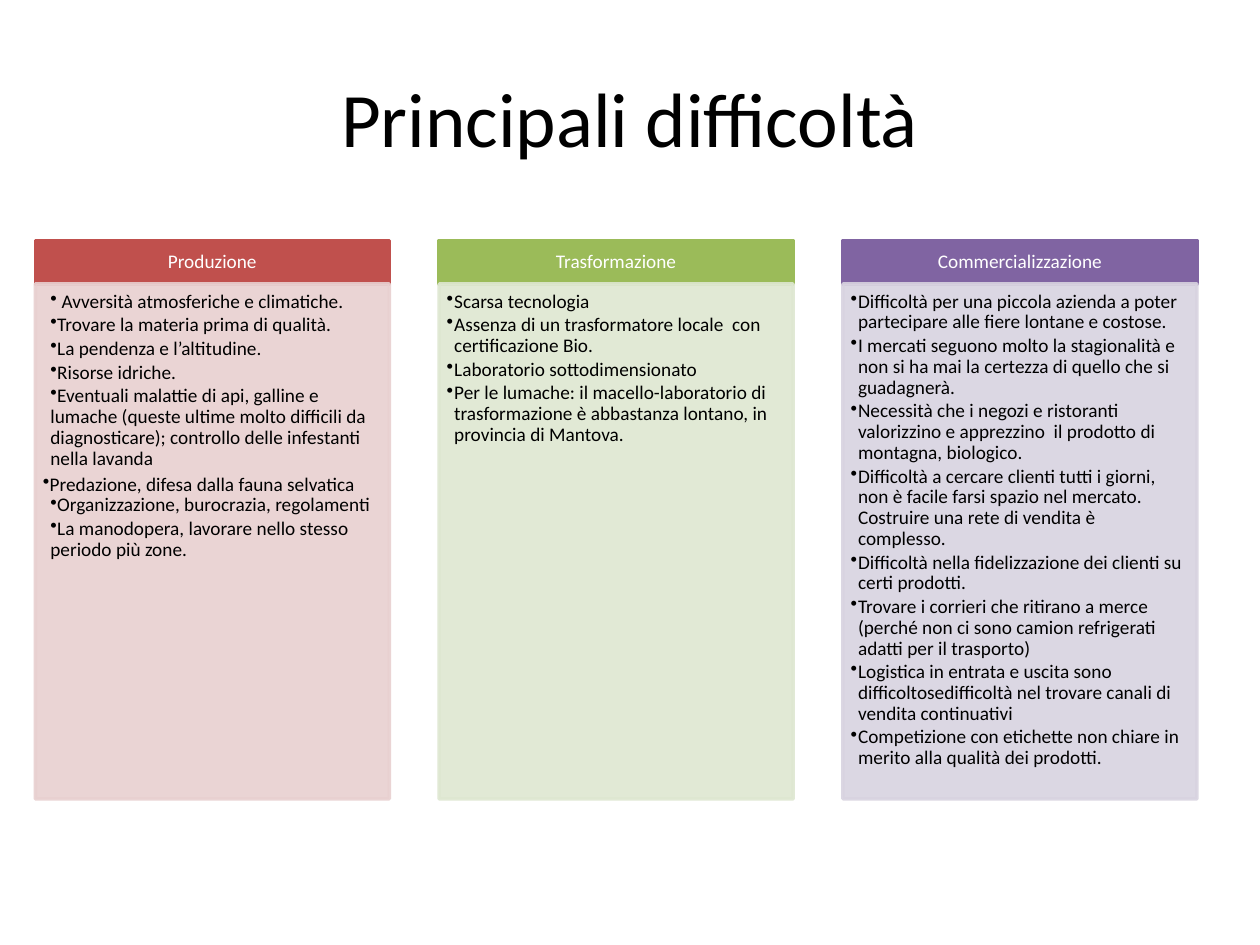
from dataclasses import dataclass
from typing import Any

from lxml.etree import SubElement
from pptx import Presentation
from pptx.dml.color import RGBColor
from pptx.enum.shapes import MSO_SHAPE
from pptx.enum.text import MSO_ANCHOR, PP_ALIGN
from pptx.oxml.ns import qn
from pptx.util import Inches, Pt

WIDE, HIGH = Inches(10), Inches(7.5)
LEFT, STEP, SPAN = 0.028, 0.3205, 0.281
TOP, HEAD, BODY = 0.2545, 0.046, 0.545
INK, PAPER = "000000", "FFFFFF"


@dataclass
class Column:
    name: str
    dark: str
    light: str
    items: list[str]
    hang: float = -0.06
    plain: str = ""


COLS = [
    Column("Produzione", "C0504D", "E8D0D0", [
        " Avversità atmosferiche e climatiche.",
        "Trovare la materia prima di qualità.",
        "La pendenza e l’altitudine.",
        "Risorse idriche.",
        "Eventuali malattie di api, galline e lumache (queste ultime molto difficili da "
        "diagnosticare); controllo delle infestanti nella lavanda",
        "Predazione, difesa dalla fauna selvatica",
        "Organizzazione, burocrazia, regolamenti",
        "La manodopera, lavorare nello stesso periodo più zone.",
    ], 0, "Predazione, difesa dalla fauna selvatica"),
    Column("Trasformazione", "9BBB59", "DEE7D1", [
        "Scarsa tecnologia",
        "Assenza di un trasformatore locale  con certificazione Bio.",
        "Laboratorio sottodimensionato",
        "Per le lumache: il macello-laboratorio di trasformazione è abbastanza lontano, "
        "in provincia di Mantova.",
    ]),
    Column("Commercializzazione", "8064A2", "D8D3E0", [
        "Difficoltà per una piccola azienda a poter partecipare alle fiere lontane e costose.",
        "I mercati seguono molto la stagionalità e non si ha mai la certezza di quello che "
        "si guadagnerà.",
        "Necessità che i negozi e ristoranti valorizzino e apprezzino  il prodotto di "
        "montagna, biologico.",
        "Difficoltà a cercare clienti tutti i giorni, non è facile farsi spazio nel mercato. "
        "Costruire una rete di vendita è complesso.",
        "Difficoltà nella fidelizzazione dei clienti su certi prodotti.",
        "Trovare i corrieri che ritirano a merce (perché non ci sono camion refrigerati "
        "adatti per il trasporto)",
        "Logistica in entrata e uscita sono difficoltosedifficoltà nel trovare canali di "
        "vendita continuativi",
        "Competizione con etichette non chiare in merito alla qualità dei prodotti.",
    ]),
]


def assign(thing: Any, form: dict[str, Any]) -> None:
    for key, value in form.items():
        setattr(thing, key, value)


def paint(color: Any, code: str) -> None:
    color.rgb = RGBColor.from_string(code)


def place(left: float, top: float, wide: float, high: float) -> list[int]:
    return [round(left * WIDE), round(top * HIGH), round(wide * WIDE), round(high * HIGH)]


def frame(shape: Any, anchor: Any, pads: tuple[float, float, float, float]) -> Any:
    text = shape.text_frame
    sides = ("margin_left", "margin_top", "margin_right", "margin_bottom")
    assign(text, {"word_wrap": True, "vertical_anchor": anchor}
           | {side: Inches(pad) for side, pad in zip(sides, pads)})
    return text


def write(para: Any, words: str, size: int, code: str, form: dict[str, Any]) -> None:
    run = para.add_run()
    run.text = words
    assign(run.font, {"name": "Calibri", "size": Pt(size)})
    paint(run.font.color, code)
    assign(para, form)


def bullet(para: Any, left: float, hang: float) -> None:
    props = para._p.get_or_add_pPr()
    props.set("marL", str(Inches(left)))
    props.set("indent", str(Inches(hang)))
    SubElement(props, qn("a:buChar")).set("char", "•")


def panel(slide: Any, area: list[int], code: str, alpha: int = 100) -> Any:
    shape = slide.shapes.add_shape(MSO_SHAPE.RECTANGLE, *area)
    shape.shadow.inherit = False
    shape.fill.solid()
    paint(shape.fill.fore_color, code)
    paint(shape.line.color, code)
    shape.line.width = Pt(2)
    if alpha < 100:
        for tint in shape._element.spPr.iter(qn("a:srgbClr")):
            SubElement(tint, qn("a:alpha")).set("val", str(alpha * 1000))
    return shape


def draw(slide: Any, index: int, col: Column) -> None:
    left = LEFT + index * STEP
    head = panel(slide, place(left, TOP, SPAN, HEAD), col.dark)
    text = frame(head, MSO_ANCHOR.MIDDLE, (0.09, 0.05, 0.09, 0.05))
    write(text.paragraphs[0], col.name, 11, PAPER,
          {"alignment": PP_ALIGN.CENTER, "line_spacing": 0.9})

    body = panel(slide, place(left, TOP + HEAD, SPAN, BODY), col.light, 90)
    text = frame(body, MSO_ANCHOR.TOP, (0.06, 0.06, 0.09, 0.1))
    for row, item in enumerate(col.items):
        para = text.add_paragraph() if row else text.paragraphs[0]
        form: dict[str, Any] = {"alignment": PP_ALIGN.LEFT}
        inset = item != col.plain
        if inset:
            form |= {"level": 1, "line_spacing": 0.9, "space_after": Pt(1.65)}
        write(para, item, 11, INK, form)
        bullet(para, 0.06 if inset else 0, col.hang if inset else 0)


def main() -> None:
    deck = Presentation()
    assign(deck, {"slide_width": WIDE, "slide_height": HIGH})
    slide = deck.slides.add_slide(deck.slide_layouts[6])
    title = slide.shapes.add_textbox(*place(0.05, 0.04, 0.9, 1 / 6))
    text = frame(title, MSO_ANCHOR.MIDDLE, (0.1, 0.05, 0.1, 0.05))
    write(text.paragraphs[0], "Principali difficoltà", 44, INK,
          {"alignment": PP_ALIGN.CENTER})
    for index, col in enumerate(COLS):
        draw(slide, index, col)
    deck.save("out.pptx")


if __name__ == "__main__":
    main()
